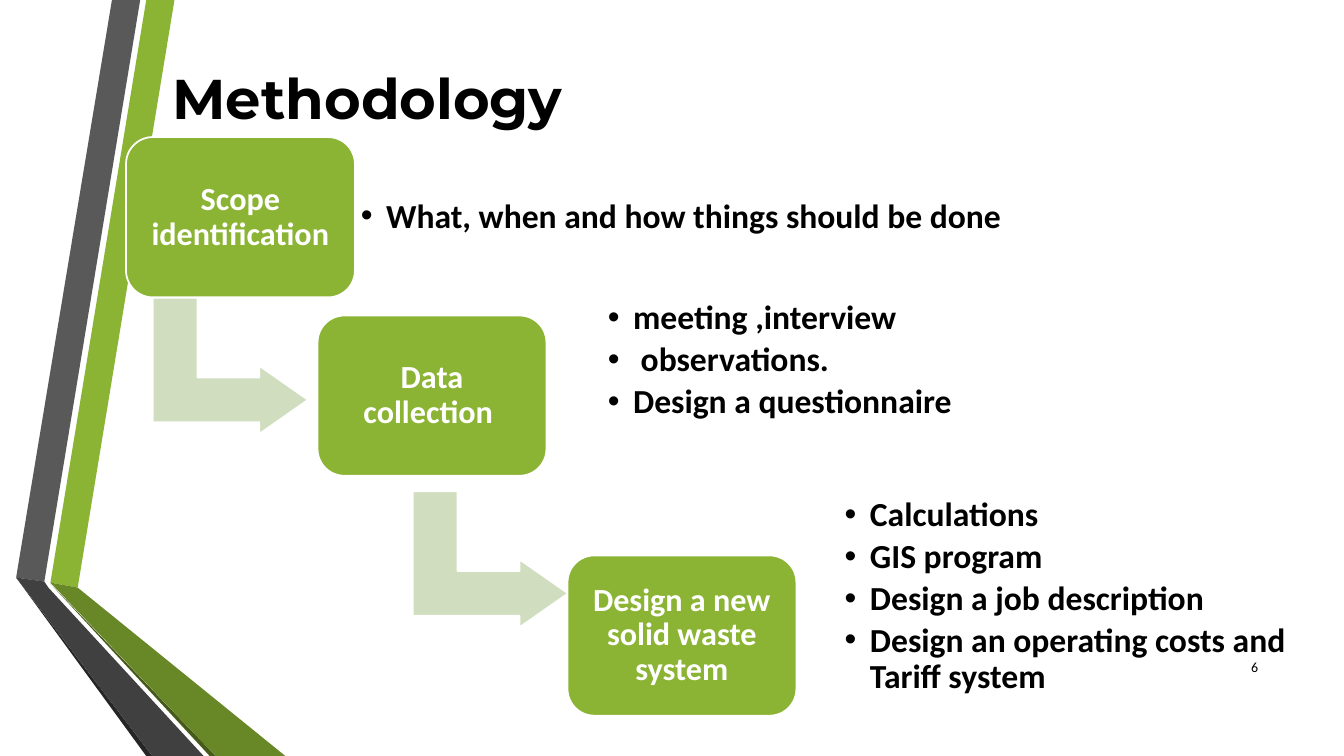
from lxml import etree
from pptx import Presentation
from pptx.dml.color import RGBColor
from pptx.enum.shapes import MSO_SHAPE
from pptx.enum.text import MSO_ANCHOR, MSO_AUTO_SIZE, PP_ALIGN
from pptx.oxml.ns import qn
from pptx.util import Inches, Pt

ROUNDED = MSO_SHAPE.ROUNDED_RECTANGLE
BENT_ARROW = MSO_SHAPE.BENT_UP_ARROW
MIDDLE = MSO_ANCHOR.MIDDLE
NO_FIT = MSO_AUTO_SIZE.NONE
LEFT, CENTER, RIGHT = PP_ALIGN.LEFT, PP_ALIGN.CENTER, PP_ALIGN.RIGHT

GREEN, PALE_GREEN, WHITE, BLACK = "8BB434", "D0DEBF", "FFFFFF", "000000"
COMPARISON_LAYOUT = 4

# All places and sizes are percentages of the slide's width and height.
TITLE = ("Methodology", (12.08, 5.6, 82.2, 14.4))
PAGE_NUMBER = ("6", (89.85, 85.6, 4.5, 5.33))
STEP_SIZE = (17.03, 21.2)
ARROW_SIZE = (10.13, 20.53)
STEPS = [
    {"label": "Scope identification", "at": (9.38, 18.13), "arrow": (12.08, 38.13),
     "list_box": (26.1, 20.13, 51.53, 17.2),
     "items": ["What, when and how things should be done"]},
    {"label": "Data collection ", "at": (23.63, 41.73), "arrow": (31.43, 63.73),
     "list_box": (44.48, 38.13, 34.8, 19.2),
     "items": ["meeting ,interview", " observations.", "Design a questionnaire"]},
    {"label": "Design a new solid waste system", "at": (42.23, 73.47), "arrow": None,
     "list_box": (62.1, 66.93, 34.88, 24),
     "items": ["Calculations", "GIS program", "Design a job description",
               "Design an operating costs and Tariff system"]},
]
RIBBONS = [
    (GREEN, [(3.75, 77.07), (5.78, 77.73), (12.98, 0), (10.88, 0)]),
    ("595959", [(10.43, 0), (8.33, 0), (1.2, 76.4), (3.3, 76.93)]),
    ("262626", [(1.2, 76.4), (10.88, 100), (11.33, 100)]),
    ("465A1A", [(3.75, 77.2), (15.6, 100), (16.05, 100)]),
    ("688727", [(3.75, 77.07), (16.05, 100), (21.23, 100), (5.78, 77.73)]),
    ("404040", [(15.15, 100), (3.6, 77.73), (3.3, 76.93), (1.2, 76.4), (11.33, 100)]),
]

deck = Presentation()
deck.slide_width, deck.slide_height = Inches(13.33), Inches(7.5)
page = deck.slides.add_slide(deck.slide_layouts[COMPARISON_LAYOUT])
shapes = page.shapes


def lengths(*shares):
    """Turn alternating width and height percentages into slide lengths."""
    sides = (deck.slide_width, deck.slide_height)
    return [round(share * sides[i % 2] / 100) for i, share in enumerate(shares)]


def place(shape, box):
    shape.left, shape.top, shape.width, shape.height = lengths(*box)


def paint(shape, fill, line=None):
    shape.shadow.inherit = False
    shape.fill.solid()
    shape.fill.fore_color.rgb = RGBColor.from_string(fill)
    if line:
        shape.line.color.rgb = RGBColor.from_string(line)
        shape.line.width = Pt(1.25)
    else:
        shape.line.fill.background()


def write(shape, lines, size, color=BLACK, font="Calibri", bold=True,
          align=LEFT, spacing=1.0, inset=0.1):
    frame = shape.text_frame
    frame.text = "\n".join(lines)
    frame.word_wrap = True
    frame.auto_size = NO_FIT
    frame.vertical_anchor = MIDDLE
    frame.margin_left = frame.margin_right = Inches(inset)
    frame.margin_top = frame.margin_bottom = Inches(inset)
    for para in frame.paragraphs:
        para.alignment = align
        para.line_spacing = spacing
        para.space_before = Pt(0)
        for span in para.runs:
            span.font.name, span.font.size, span.font.bold = font, Pt(size), bold
            span.font.color.rgb = RGBColor.from_string(color)


def add_bullets(shape):
    for para in shape.text_frame.paragraphs:
        para.space_after = Pt(4)
        properties = para._p.get_or_add_pPr()
        properties.set("marL", str(Inches(0.25)))
        properties.set("indent", str(-Inches(0.25)))
        etree.SubElement(properties, qn("a:buFont")).set("typeface", "Arial")
        etree.SubElement(properties, qn("a:buChar")).set("char", "•")


for color, corners in RIBBONS:
    points = [lengths(*corner) for corner in corners]
    builder = shapes.build_freeform(*points[0])
    builder.add_line_segments(points[1:], close=True)
    paint(builder.convert_to_shape(), color)

title_text, title_box = TITLE
place(shapes.title, title_box)
write(shapes.title, [title_text], 40, font="Montserrat")

number_text, number_box = PAGE_NUMBER
number = shapes.add_textbox(*lengths(*number_box))
write(number, [number_text], 10, bold=False, align=RIGHT)

bodies = [holder for holder in page.placeholders if holder.placeholder_format.idx > 0]
for step, body in zip(STEPS, bodies):
    if step["arrow"]:
        arrow = shapes.add_shape(BENT_ARROW, *lengths(*step["arrow"], *ARROW_SIZE))
        arrow.rotation = 90
        for i, share in enumerate((0.328, 0.25, 0.358)):
            arrow.adjustments[i] = share
        paint(arrow, PALE_GREEN, WHITE)

    box = shapes.add_shape(ROUNDED, *lengths(*step["at"], *STEP_SIZE))
    box.adjustments[0] = 0.167
    paint(box, GREEN, WHITE)
    write(box, [step["label"]], 23, WHITE, align=CENTER, spacing=0.9)

    place(body, step["list_box"])
    write(body, step["items"], 24, spacing=0.9)
    add_bullets(body)

for spare in bodies[len(STEPS):]:
    spare.element.getparent().remove(spare.element)

deck.save("out.pptx")
